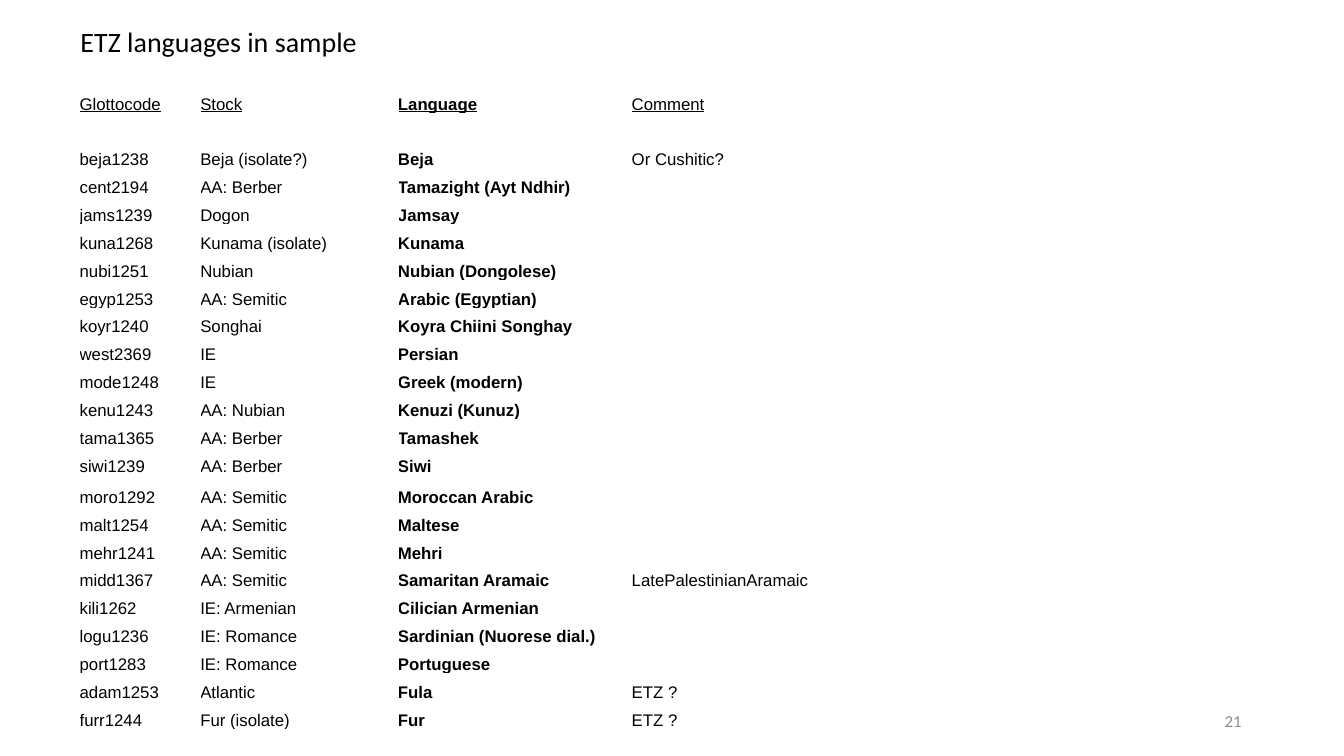
"""Build the slide listing the ETZ languages in the sample."""
import pptx
import pptx.dml.color
import pptx.enum.text
import pptx.oxml.ns
import pptx.util
from lxml import etree

Pt = pptx.util.Pt
qn = pptx.oxml.ns.qn


def style(run, size, font, color):
    run.font.size = Pt(size)
    run.font.name = font
    run.font.color.rgb = pptx.dml.color.RGBColor.from_string(color)


def add_label(left, top, width, height, text, size, color):
    label = slide.shapes.add_textbox(Pt(left), Pt(top), Pt(width), Pt(height))
    label.text_frame.word_wrap = True
    label.text_frame.text = text
    style(label.text_frame.paragraphs[0].runs[0], size, "Calibri", color)
    return label.text_frame


header = ("Glottocode", "Stock", "Language", "Comment")
languages = [
    ("beja1238", "Beja (isolate?)", "Beja", "Or Cushitic?"),
    ("cent2194", "AA: Berber", "Tamazight (Ayt Ndhir)"),
    ("jams1239", "Dogon", "Jamsay"),
    ("kuna1268", "Kunama (isolate)", "Kunama"),
    ("nubi1251", "Nubian", "Nubian (Dongolese)"),
    ("egyp1253", "AA: Semitic", "Arabic (Egyptian)"),
    ("koyr1240", "Songhai", "Koyra Chiini Songhay"),
    ("west2369", "IE", "Persian"),
    ("mode1248", "IE", "Greek (modern)"),
    ("kenu1243", "AA: Nubian", "Kenuzi (Kunuz)"),
    ("tama1365", "AA: Berber", "Tamashek"),
    ("siwi1239", "AA: Berber", "Siwi"),
    ("moro1292", "AA: Semitic", "Moroccan Arabic"),
    ("malt1254", "AA: Semitic", "Maltese"),
    ("mehr1241", "AA: Semitic", "Mehri"),
    ("midd1367", "AA: Semitic", "Samaritan Aramaic", "LatePalestinianAramaic"),
    ("kili1262", "IE: Armenian", "Cilician Armenian"),
    ("logu1236", "IE: Romance", "Sardinian (Nuorese dial.)"),
    ("port1283", "IE: Romance", "Portuguese"),
    ("adam1253", "Atlantic", "Fula", "ETZ ?"),
    ("furr1244", "Fur (isolate)", "Fur", "ETZ ?"),
]
entries = [header, ()] + languages
column_widths = (86.2, 141.2, 167, 162.5, 91.8)

presentation = pptx.Presentation()
presentation.slide_width = Pt(960)
presentation.slide_height = Pt(540)
slide = presentation.slides.add_slide(presentation.slide_layouts[6])

page_number = add_label(678, 500.5, 216, 28.8, "21", 12, "8C8C8C")
page_number.vertical_anchor = pptx.enum.text.MSO_ANCHOR.MIDDLE
page_number.paragraphs[0].alignment = pptx.enum.text.PP_ALIGN.RIGHT

language_table = slide.shapes.add_table(
    len(entries), len(column_widths), Pt(56.9), Pt(61.2), Pt(sum(column_widths)), Pt(460)
).table
language_table.first_row = False
language_table.horz_banding = False
for column, width in zip(language_table.columns, column_widths):
    column.width = Pt(width)

for row_index, entry in enumerate(entries):
    moroccan = "moro1292" in entry
    language_table.rows[row_index].height = Pt(22.3 if moroccan else 19.9)
    for column_index in range(len(column_widths)):
        cell = language_table.cell(row_index, column_index)
        cell.margin_left = cell.margin_right = cell.margin_top = cell.margin_bottom = 0
        cell.vertical_anchor = pptx.enum.text.MSO_ANCHOR.BOTTOM
        for side in ("a:lnL", "a:lnR", "a:lnT", "a:lnB"):
            border = etree.SubElement(cell._tc.get_or_add_tcPr(), qn(side), w="12700")
            border_fill = etree.SubElement(border, qn("a:solidFill"))
            etree.SubElement(border_fill, qn("a:srgbClr"), val="FFFFFF")
        cell.fill.background()
        paragraph = cell.text_frame.paragraphs[0]
        if column_index < len(entry):
            paragraph.text = entry[column_index]
            run = paragraph.runs[0]
            style(run, 12, "Arial", "000000")
            run.font.bold = header[column_index] == "Language"
            run.font.underline = entry is header
        else:
            etree.SubElement(paragraph._p, qn("a:endParaRPr"), sz="1200")
    if "LatePalestinianAramaic" in entry:
        language_table.cell(row_index, 3).merge(language_table.cell(row_index, 4))

title = add_label(50.4, 13.7, 233.3, 31.5, "ETZ languages in sample", 20, "000000")
title.auto_size = pptx.enum.text.MSO_AUTO_SIZE.SHAPE_TO_FIT_TEXT

presentation.save("out.pptx")
